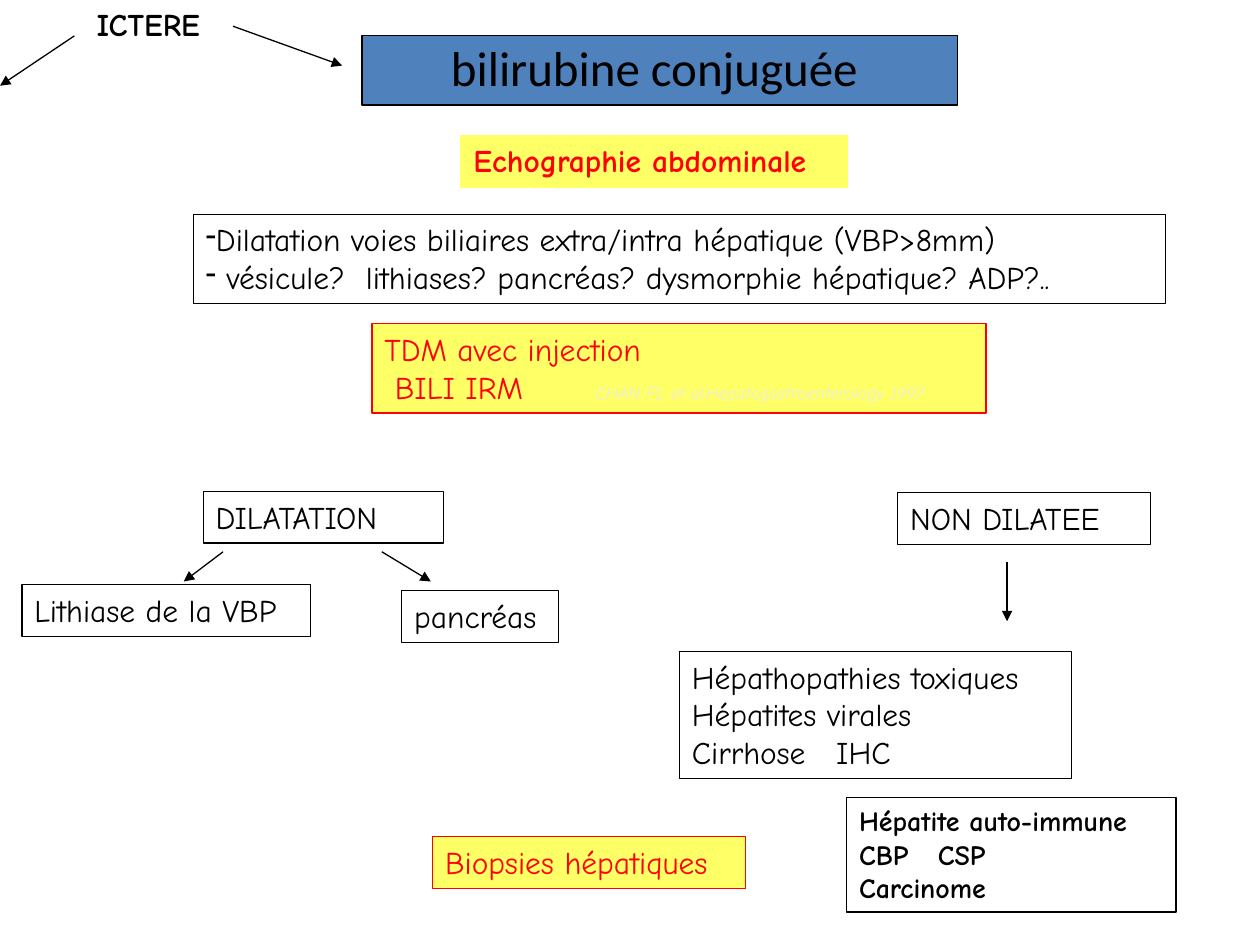
from dataclasses import dataclass
from typing import Optional

from lxml.etree import SubElement
from pptx import Presentation
from pptx.dml.color import RGBColor
from pptx.enum.shapes import MSO_CONNECTOR, MSO_SHAPE
from pptx.enum.text import MSO_ANCHOR, PP_ALIGN
from pptx.oxml.ns import qn
from pptx.util import Pt


@dataclass(frozen=True)
class Theme:
    title_font: str = "Calibri"
    body_font: str = "Comic Neue"
    black: str = "000000"
    red: str = "FF0000"
    yellow: str = "FFFF66"
    blue: str = "4F81BD"
    cream: str = "EEECE1"
    title_size: float = 28
    body_size: float = 18
    small_size: float = 16
    citation_size: float = 10
    line_width: float = 0.75


THEME = Theme()


@dataclass(frozen=True)
class Box:
    left: float
    top: float
    width: float
    height: float
    lines: tuple[str, ...]
    fill: Optional[str] = None
    outline: Optional[str] = THEME.black
    color: str = THEME.black
    size: float = THEME.body_size
    bold: bool = False
    bullet: Optional[str] = None
    tab: Optional[float] = None


@dataclass(frozen=True)
class Arrow:
    start: tuple[float, float]
    end: tuple[float, float]


def add_text(paragraph, text: str, *, font: str = THEME.body_font,
             size: float = THEME.body_size, color: str = THEME.black,
             bold: bool = False, italic: bool = False) -> None:
    run = paragraph.add_run()
    run.text = text
    run.font.name = font
    run.font.size = Pt(size)
    run.font.bold = bold
    run.font.italic = italic
    run.font.color.rgb = RGBColor.from_string(color)


def set_paint(shape, fill: Optional[str], outline: Optional[str]) -> None:
    if fill:
        shape.fill.solid()
        shape.fill.fore_color.rgb = RGBColor.from_string(fill)
    else:
        shape.fill.background()
    if outline:
        shape.line.color.rgb = RGBColor.from_string(outline)
        shape.line.width = Pt(THEME.line_width)
    else:
        shape.line.fill.background()


def set_bullet_and_tab(paragraph, bullet: Optional[str], tab: Optional[float]) -> None:
    properties = paragraph._p.get_or_add_pPr()
    if bullet:
        SubElement(properties, qn("a:buChar"), char=bullet)
    if tab:
        stops = SubElement(properties, qn("a:tabLst"))
        SubElement(stops, qn("a:tab"), pos=str(int(Pt(tab))), algn="l")


def add_box(slide, box: Box):
    shape = slide.shapes.add_shape(MSO_SHAPE.RECTANGLE, Pt(box.left), Pt(box.top),
                                   Pt(box.width), Pt(box.height))
    shape.shadow.inherit = False
    set_paint(shape, box.fill, box.outline)
    frame = shape.text_frame
    frame.word_wrap = True
    frame.vertical_anchor = MSO_ANCHOR.TOP
    for index, line in enumerate(box.lines):
        paragraph = frame.add_paragraph() if index else frame.paragraphs[0]
        paragraph.alignment = PP_ALIGN.LEFT
        set_bullet_and_tab(paragraph, box.bullet, box.tab)
        add_text(paragraph, line, size=box.size, color=box.color, bold=box.bold)
    return shape


def add_arrow(slide, arrow: Arrow) -> None:
    connector = slide.shapes.add_connector(
        MSO_CONNECTOR.STRAIGHT, *(Pt(value) for value in arrow.start + arrow.end))
    connector.line.color.rgb = RGBColor.from_string(THEME.black)
    connector.line.width = Pt(THEME.line_width)
    SubElement(connector.line._get_or_add_ln(), qn("a:tailEnd"), type="triangle")
    SubElement(connector._element.spPr, qn("a:effectLst"))


def format_title(slide) -> None:
    title = slide.shapes.title
    title.left, title.top, title.width, title.height = Pt(206.9), Pt(20.3), Pt(340.3), Pt(39.7)
    set_paint(title, THEME.blue, THEME.black)
    title.text_frame.vertical_anchor = MSO_ANCHOR.MIDDLE
    paragraph = title.text_frame.paragraphs[0]
    paragraph.alignment = PP_ALIGN.CENTER
    paragraph.line_spacing = 0.9
    add_text(paragraph, "bilirubine conjuguée ", font=THEME.title_font, size=THEME.title_size)


ONE_LINE, TWO_LINES, THREE_LINES = 29.5, 51.1, 72.7

BOXES = (
    # Starting point and first examination
    Box(48.2, -0.5, 82, 29, ("ICTERE",), outline=None, bold=True),
    Box(263.5, 77.3, 221, ONE_LINE, ("Echographie abdominale",), fill=THEME.yellow,
        outline=THEME.yellow, color=THEME.red, bold=True),
    Box(110.4, 122.4, 555.6, TWO_LINES,
        ("Dilatation voies biliaires extra/intra hépatique (VBP>8mm)",
         " vésicule?  lithiases? pancréas? dysmorphie hépatique? ADP?.."), bullet="-"),
    # Dilated branch
    Box(116.2, 280.8, 137.2, ONE_LINE, ("DILATATION",)),
    Box(12.5, 334.1, 164.9, ONE_LINE, ("Lithiase de la VBP",)),
    Box(229.6, 337.5, 89.4, ONE_LINE, ("pancréas",)),
    # Branch without dilatation
    Box(513, 281.5, 144.5, ONE_LINE, ("NON DILATEE",)),
    Box(388.3, 372.2, 224, THREE_LINES,
        ("Hépathopathies toxiques", "Hépatites virales", "Cirrhose\tIHC"), tab=82.5),
    Box(483.8, 455.8, 188.2, 65.3,
        ("Hépatite auto-immune", "CBP\tCSP", "Carcinome"),
        size=THEME.small_size, bold=True, tab=45),
    Box(247.3, 478.1, 178.8, ONE_LINE, ("Biopsies hépatiques",),
        fill=THEME.yellow, outline=THEME.red, color=THEME.red),
)

IMAGING = Box(212.6, 184.9, 350.8, TWO_LINES, ("TDM avec injection", " BILI IRM\t"),
              fill=THEME.yellow, outline=THEME.red, color=THEME.red, tab=120.5)

ARROWS = (
    Arrow((133.2, 15), (195.5, 37.5)),
    Arrow((42.5, 20.5), (0, 49)),
    Arrow((127.5, 315.3), (105, 332.3)),
    Arrow((218.2, 315.3), (246.2, 332.3)),
    Arrow((575.5, 321), (575.5, 355)),
)


def main() -> None:
    presentation = Presentation()
    presentation.slide_width, presentation.slide_height = Pt(720), Pt(540)
    slide = presentation.slides.add_slide(presentation.slide_layouts[5])

    format_title(slide)
    for box in BOXES:
        add_box(slide, box)
    for arrow in ARROWS:
        add_arrow(slide, arrow)

    # Second imaging step, with its citation on the last line
    imaging = add_box(slide, IMAGING)
    add_text(imaging.text_frame.paragraphs[-1], "CHAN FL et al.Hepatogastroenterology 1997",
             size=THEME.citation_size, color=THEME.cream, italic=True)

    presentation.save("out.pptx")


if __name__ == "__main__":
    main()
